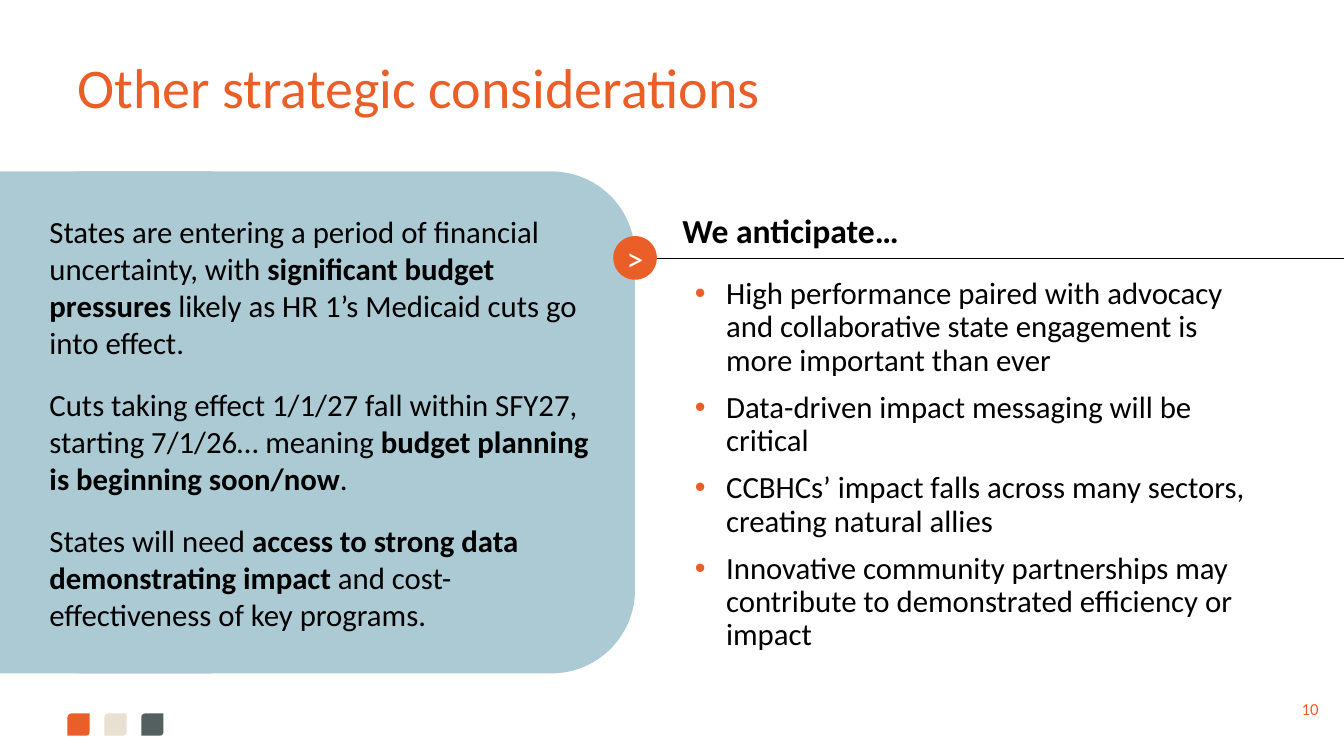
from collections import namedtuple
from dataclasses import dataclass

from lxml import etree
from pptx import Presentation
from pptx import util as u
from pptx.dml import color
from pptx.enum import shapes, text
from pptx.oxml import ns

Box = namedtuple("Box", "x y w h")
A, P = text.PP_ALIGN, text.MSO_ANCHOR


@dataclass(frozen=True)
class Theme:
    font: str = "Calibri"
    orange: str = "EA5E28"
    sand: str = "E8E0D1"
    slate: str = "53605F"
    blue: str = "ACCAD3"
    black: str = "000000"
    white: str = "FFFFFF"
    title: int = 40
    heading: int = 24
    body: int = 22
    number: int = 12


T = Theme()


def rgb(value):
    return color.RGBColor.from_string(value)


def place(sp, box):
    sp.left, sp.top, sp.width, sp.height = (u.Cm(v) for v in box)


def add_bullet(p, bullet_color):
    pPr = p._p.get_or_add_pPr()
    clr = etree.SubElement(pPr, ns.qn("a:buClr"))
    etree.SubElement(clr, ns.qn("a:srgbClr"), val=bullet_color)
    etree.SubElement(pPr, ns.qn("a:buFont"), typeface="Arial")
    etree.SubElement(pPr, ns.qn("a:buChar"), char="•")


def write(tf, paragraphs, size, ink=T.black, bold=False, align=A.LEFT, anchor=P.TOP,
          line=1.0, before=0, margin=0, hang=0, bullet=None, wrap=True):
    tf.word_wrap = wrap
    tf.auto_size = text.MSO_AUTO_SIZE.NONE
    tf.vertical_anchor = anchor
    for i, content in enumerate(paragraphs):
        p = tf.add_paragraph() if i else tf.paragraphs[0]
        pPr = p._p.get_or_add_pPr()
        pPr.set("marL", str(u.Cm(margin)))
        pPr.set("indent", str(-u.Cm(hang)))
        if bullet:
            add_bullet(p, bullet)
        p.alignment = align
        p.line_spacing = line
        p.space_before = u.Pt(before if i else 0)
        for j, part in enumerate(content.split("**")):
            r = p.add_run()
            r.text = part
            r.font.name = T.font
            r.font.size = u.Pt(size)
            r.font.bold = bold or j % 2 == 1
            r.font.color.rgb = rgb(ink)


def add_block(s, kind, box, fill):
    sp = s.shapes.add_shape(kind, *(u.Cm(v) for v in box))
    sp.shadow.inherit = False
    sp.fill.solid()
    sp.fill.fore_color.rgb = rgb(fill)
    sp.line.fill.background()
    return sp


def add_label(s, box, content, size, **fmt):
    sp = s.shapes.add_textbox(*(u.Cm(v) for v in box))
    write(sp.text_frame, [content], size, **fmt)


def add_title(s, box, content):
    place(s.shapes.title, box)
    write(s.shapes.title.text_frame, [content], T.title, ink=T.orange, anchor=P.MIDDLE, line=0.9)


def add_panel(s, box, paragraphs):
    add_block(s, shapes.MSO_SHAPE.RECTANGLE, box._replace(w=box.w / 3), T.blue)
    sp = add_block(s, shapes.MSO_SHAPE.ROUNDED_RECTANGLE, box, T.blue)
    write(sp.text_frame, paragraphs, T.body, anchor=P.MIDDLE, before=18, margin=0.38)


def add_outlook(s, box, heading, bullets):
    rule_y = box.y + 2.18
    rule = s.shapes.add_connector(shapes.MSO_CONNECTOR.STRAIGHT, u.Cm(box.x), u.Cm(rule_y),
                                  u.Cm(box.x + box.w), u.Cm(rule_y))
    rule.line.color.rgb = rgb(T.black)
    rule.line.width = u.Pt(0.5)
    etree.SubElement(rule._element.spPr, ns.qn("a:effectLst"))

    add_label(s, Box(box.x + 0.94, box.y + 0.84, 14.94, 1.27), heading, T.heading, bold=True)

    body = s.placeholders[1]
    place(body, Box(box.x + 1.25, rule_y + 0.38, 14.94, box.h - 2.56))
    write(body.text_frame, bullets, T.body, line=0.9, before=10,
          margin=0.79, hang=0.79, bullet=T.orange)

    d = 1.1
    badge = add_block(s, shapes.MSO_SHAPE.OVAL, Box(box.x - d / 2, rule_y - d / 2, d, d), T.orange)
    write(badge.text_frame, [">"], T.heading, ink=T.white, align=A.CENTER,
          anchor=P.MIDDLE, wrap=False)


def add_footer(s, box, number):
    side, pitch = 0.56, 0.93
    for i, fill in enumerate((T.orange, T.sand, T.slate)):
        add_block(s, shapes.MSO_SHAPE.ROUND_2_DIAG_RECTANGLE,
                  Box(box.x + 1.7 + i * pitch, box.y + 0.63, side, side), fill)
    add_label(s, Box(box.x + box.w - 1.7, box.y, 1.7, 1.02), number, T.number,
              ink=T.orange, align=A.CENTER, anchor=P.MIDDLE)


def main():
    prs = Presentation()
    prs.slide_width, prs.slide_height = u.Cm(33.86), u.Cm(19.05)
    s = prs.slides.add_slide(prs.slide_layouts[1])
    add_title(s, Box(1.7, 1.02, 30.45, 2.51), "Other strategic considerations")
    add_panel(s, Box(0, 4.32, 16, 12.65), [
        "States are entering a period of financial uncertainty, with "
        "**significant budget pressures** likely as HR 1’s Medicaid cuts go into effect.",
        "Cuts taking effect 1/1/27 fall within SFY27, starting 7/1/26… meaning "
        "**budget planning is beginning soon/now**.",
        "States will need **access to strong data demonstrating impact **"
        "and cost-effectiveness of key programs.",
    ])
    add_outlook(s, Box(16, 4.32, 17.86, 12.65), "We anticipate…", [
        "High performance paired with advocacy and collaborative state engagement "
        "is more important than ever",
        "Data-driven impact messaging will be critical",
        "CCBHCs’ impact falls across many sectors, creating natural allies",
        "Innovative community partnerships may contribute to demonstrated efficiency or impact",
    ])
    add_footer(s, Box(0, 17.35, 33.86, 1.7), "10")
    prs.save("out.pptx")


if __name__ == "__main__":
    main()
